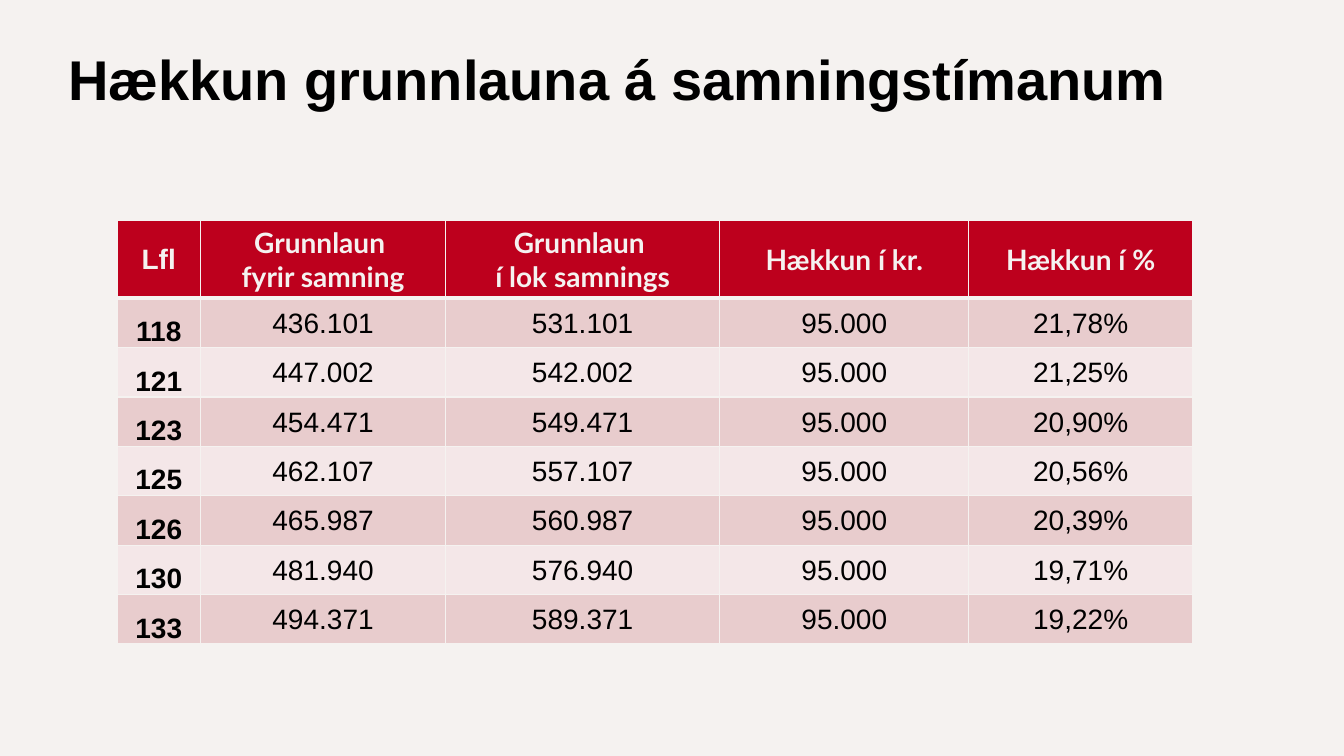
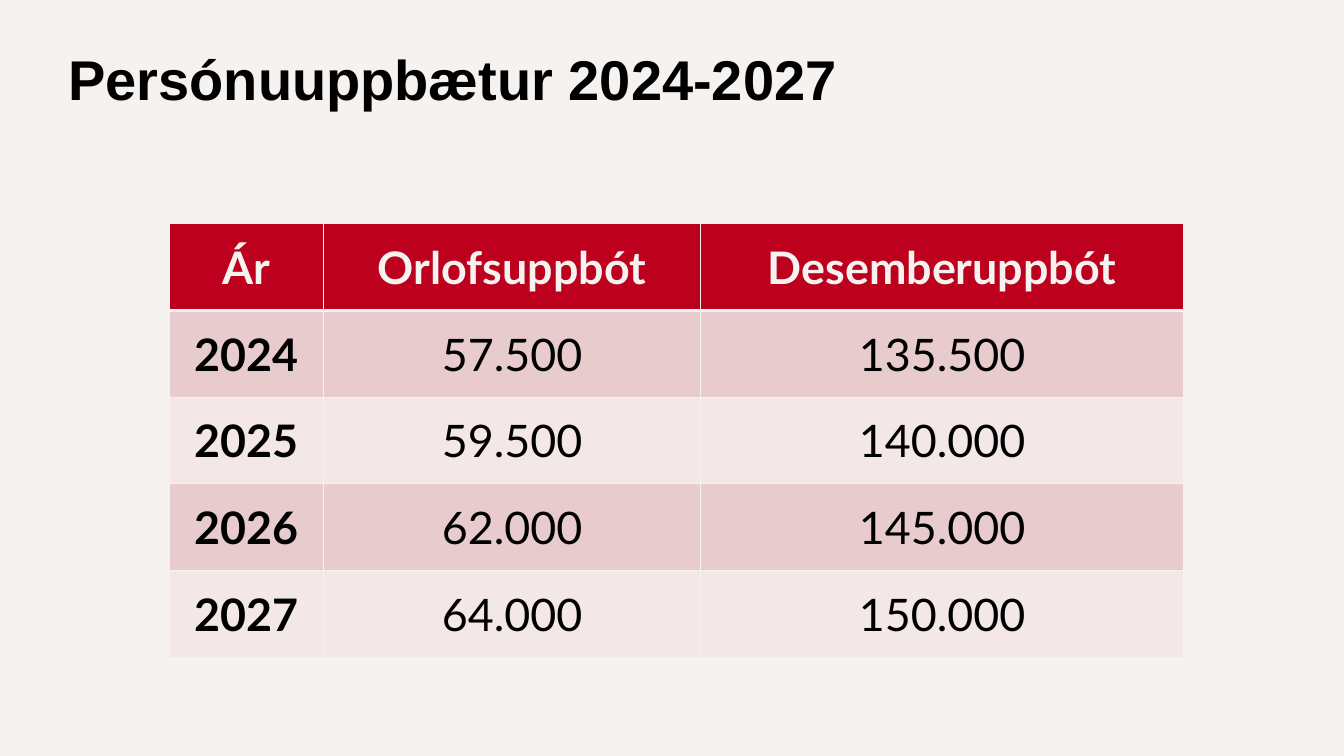
from dataclasses import dataclass

from lxml.etree import SubElement
from pptx import Presentation
from pptx.dml.color import RGBColor
from pptx.enum.text import MSO_ANCHOR as Anchor, PP_ALIGN as Align
from pptx.oxml.ns import qn
from pptx.slide import Slide
from pptx.table import _Cell as Cell
from pptx.text.text import _Paragraph as Paragraph
from pptx.util import Inches, Pt


@dataclass(frozen=True)
class Theme:
    background: str = "F5F2F0"
    header: str = "BD001D"
    bands: tuple[str, str] = ("E8CCCD", "F4E7E8")
    text: str = "000000"
    title_font: str = "Arial"
    header_font: str = "Lato"
    title_size: int = 40
    thin_border: float = 1
    thick_border: float = 3


THEME = Theme()


@dataclass(frozen=True)
class TableSlide:
    title: str
    left: float
    top: float
    column_widths: list[float]
    header_height: float
    row_height: float
    text_size: int
    body_font: str
    corner_font: str
    label_anchor: Anchor
    tight: bool
    header: list[str]
    rows: list[list[str]]


TABLE_SLIDES = [
    TableSlide(
        title="Hækkun grunnlauna á samningstímanum",
        left=1.16, top=2.19,
        column_widths=[0.83, 2.43, 2.72, 2.47, 2.22],
        header_height=0.77, row_height=0.49,
        text_size=20, body_font="Arial", corner_font="Arial",
        label_anchor=Anchor.BOTTOM, tight=True,
        header=["Lfl", "Grunnlaun \nfyrir samning", "Grunnlaun \ní lok samnings",
                "Hækkun í kr.", "Hækkun í %"],
        rows=[
            ["118", "436.101", "531.101", "95.000", "21,78%"],
            ["121", "447.002", "542.002", "95.000", "21,25%"],
            ["123", "454.471", "549.471", "95.000", "20,90%"],
            ["125", "462.107", "557.107", "95.000", "20,56%"],
            ["126", "465.987", "560.987", "95.000", "20,39%"],
            ["130", "481.940", "576.940", "95.000", "19,71%"],
            ["133", "494.371", "589.371", "95.000", "19,22%"],
        ],
    ),
    TableSlide(
        title="Persónuuppbætur 2024-2027",
        left=1.68, top=2.22,
        column_widths=[1.53, 3.74, 4.79],
        header_height=0.86, row_height=0.86,
        text_size=32, body_font="Lato", corner_font="Lato",
        label_anchor=Anchor.MIDDLE, tight=False,
        header=["Ár", "Orlofsuppbót", "Desemberuppbót"],
        rows=[
            ["2024", "57.500", "135.500"],
            ["2025", "59.500", "140.000"],
            ["2026", "62.000", "145.000"],
            ["2027", "64.000", "150.000"],
        ],
    ),
]


def add_run(paragraph: Paragraph, text: str, font: str, size: int,
            color: str, bold: bool) -> None:
    run = paragraph.add_run()
    run.text = text
    run.font.name = font
    run.font.size = Pt(size)
    run.font.color.rgb = RGBColor.from_string(color)
    run.font.bold = bold


def add_title(slide: Slide, text: str) -> None:
    box = slide.shapes.add_textbox(Inches(0.58), Inches(0.39), Inches(11.48), Inches(0.78))
    frame = box.text_frame
    frame.word_wrap = True
    frame.vertical_anchor = Anchor.BOTTOM
    paragraph = frame.paragraphs[0]
    paragraph.line_spacing = 0.9
    add_run(paragraph, text, THEME.title_font, THEME.title_size, THEME.text, True)


def set_borders(cell: Cell, top: float, bottom: float) -> None:
    """Draw the four cell borders; they must come before the fill in the XML."""
    properties = cell._tc.get_or_add_tcPr()
    widths = {"L": THEME.thin_border, "R": THEME.thin_border, "T": top, "B": bottom}
    for index, (side, width) in enumerate(widths.items()):
        line = SubElement(properties, qn(f"a:ln{side}"), w=str(Pt(width)))
        fill = SubElement(line, qn("a:solidFill"))
        SubElement(fill, qn("a:srgbClr"), val=THEME.background)
        properties.insert(index, line)


def fill_cell(cell: Cell, content: TableSlide, row: int, column: int, text: str) -> None:
    is_header, is_label = row == 0, column == 0
    if is_header:
        fill, color = THEME.header, THEME.background
        font = content.corner_font if is_label else THEME.header_font
    else:
        fill, color = THEME.bands[(row - 1) % 2], THEME.text
        font = content.body_font

    cell.fill.solid()
    cell.fill.fore_color.rgb = RGBColor.from_string(fill)
    set_borders(
        cell,
        top=THEME.thick_border if row == 1 else THEME.thin_border,
        bottom=THEME.thick_border if is_header else THEME.thin_border,
    )
    cell.vertical_anchor = content.label_anchor if is_label and not is_header else Anchor.MIDDLE
    if content.tight and (is_label or not is_header):
        cell.margin_left = cell.margin_right = cell.margin_top = Inches(0.01)
        cell.margin_bottom = Inches(0)

    frame = cell.text_frame
    for index, line in enumerate(text.split("\n")):
        paragraph = frame.add_paragraph() if index else frame.paragraphs[0]
        paragraph.alignment = Align.CENTER
        add_run(paragraph, line, font, content.text_size, color, is_header or is_label)


def add_data_table(slide: Slide, content: TableSlide) -> None:
    lines = [content.header, *content.rows]
    heights = [content.header_height] + [content.row_height] * len(content.rows)
    table = slide.shapes.add_table(
        len(lines), len(content.header),
        Inches(content.left), Inches(content.top),
        Inches(sum(content.column_widths)), Inches(sum(heights)),
    ).table
    table.horz_banding = False
    for column, width in zip(table.columns, content.column_widths):
        column.width = Inches(width)
    for row, height in zip(table.rows, heights):
        row.height = Inches(height)
    for row_index, line in enumerate(lines):
        for column_index, text in enumerate(line):
            fill_cell(table.cell(row_index, column_index), content,
                      row_index, column_index, text)


def main() -> None:
    presentation = Presentation()
    presentation.slide_width = Inches(13.33)
    presentation.slide_height = Inches(7.5)
    background = presentation.slide_master.background.fill
    background.solid()
    background.fore_color.rgb = RGBColor.from_string(THEME.background)
    blank_layout = presentation.slide_layouts[6]
    for content in TABLE_SLIDES:
        slide = presentation.slides.add_slide(blank_layout)
        add_title(slide, content.title)
        add_data_table(slide, content)
    presentation.save("out.pptx")


if __name__ == "__main__":
    main()
